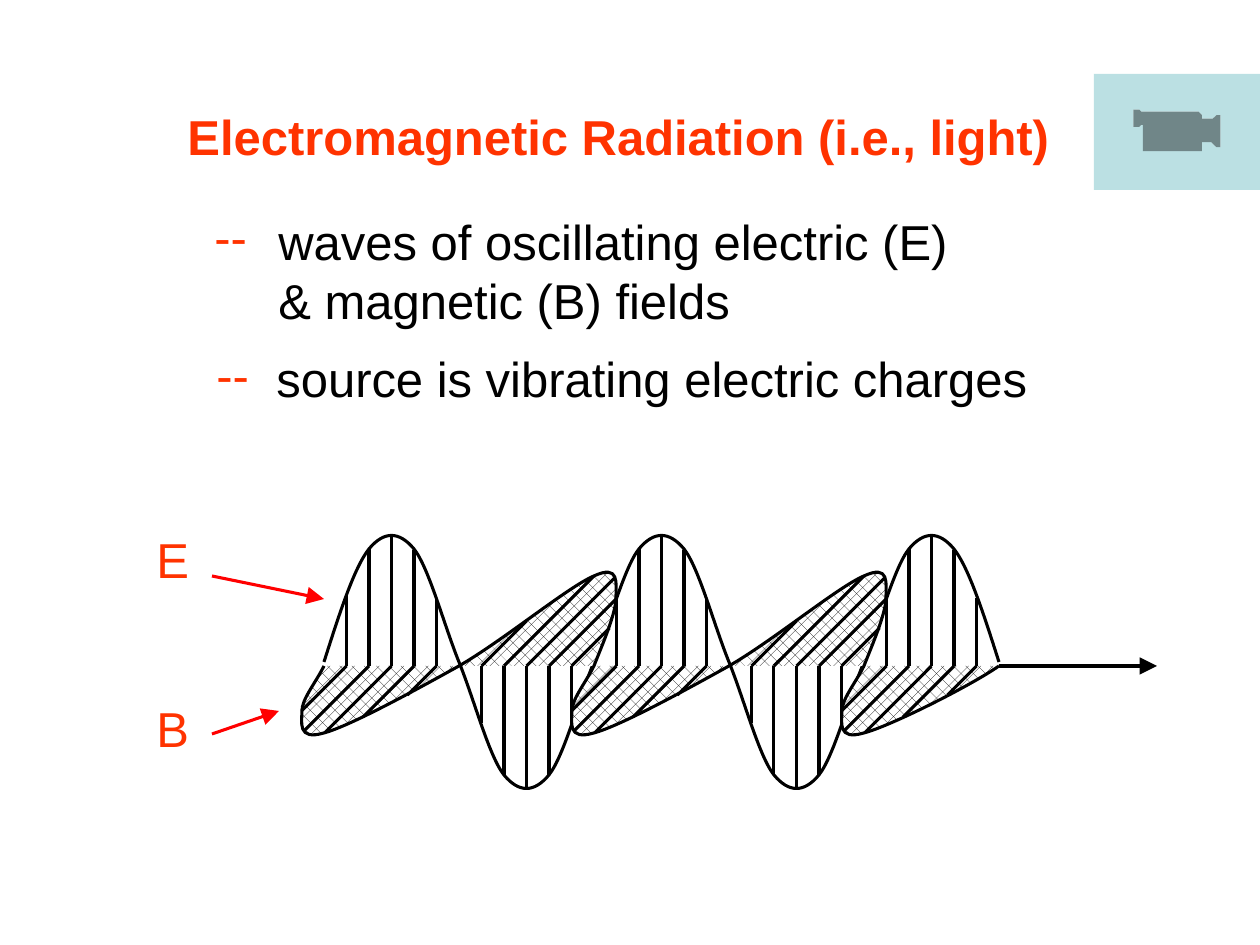
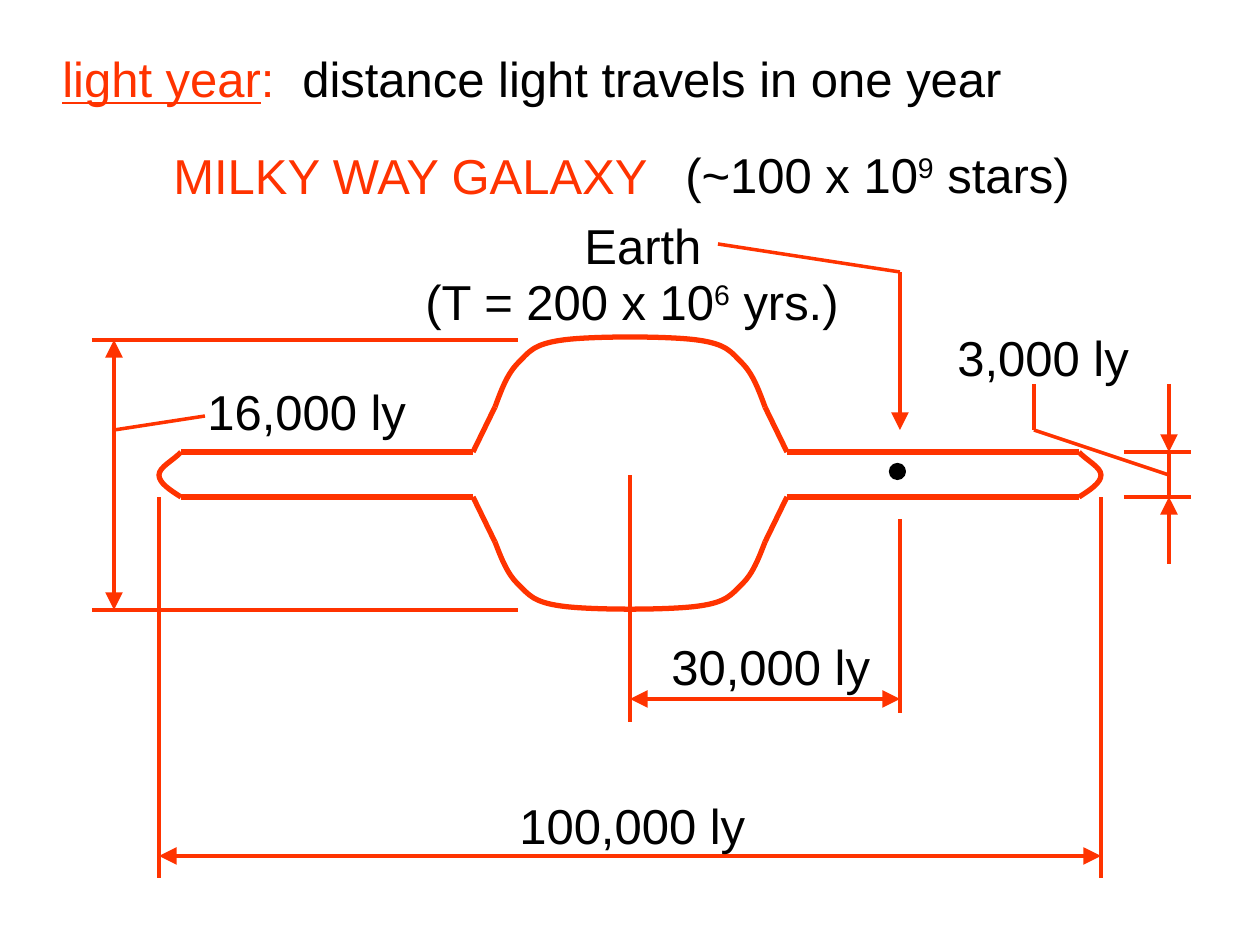
"""Build two astronomy slides: electromagnetic waves and the size of the Milky Way."""
from lxml import etree
from pptx import Presentation
from pptx.dml.color import RGBColor
from pptx.enum.dml import MSO_PATTERN
from pptx.enum.shapes import MSO_CONNECTOR, MSO_SHAPE
from pptx.enum.text import MSO_ANCHOR, MSO_AUTO_SIZE
from pptx.oxml.ns import qn
from pptx.util import Pt

STRAIGHT = MSO_CONNECTOR.STRAIGHT
MOVIE_BUTTON = MSO_SHAPE.ACTION_BUTTON_MOVIE
OVAL = MSO_SHAPE.OVAL
MIDDLE, TOP = MSO_ANCHOR.MIDDLE, MSO_ANCHOR.TOP
GROW, FIXED = MSO_AUTO_SIZE.SHAPE_TO_FIT_TEXT, MSO_AUTO_SIZE.NONE
DOTTED = MSO_PATTERN.PERCENT_30

EMU_PER_PX = 914400 / 126
SLIDE_SIZE = (1260, 945)
FONT, TEXT_SIZE = "Arial", 28
COLORS = {"accent": "FF3300", "ink": "000000", "pointer": "FF0000",
          "button": "BBE0E3", "paper": "FFFFFF"}
WAVE_WIDTH, DIMENSION_WIDTH, GALAXY_WIDTH = 1.75, 2, 3

RADIATION_TEXTS = [
    ((175, 100, 902, 72), [[("Electromagnetic Radiation (i.e., light)", "accent", "bold")]]),
    ((202, 200, 72, 72), [[("--", "accent", "")]]),
    ((204, 338, 72, 72), [[("--", "accent", "")]]),
    ((266, 205, 697, 130), [[("waves of oscillating electric (E)", "ink", "")],
                            [("& magnetic (B) fields", "ink", "")]]),
    ((264, 342, 793, 72), [[("source is vibrating electric charges", "ink", "")]]),
]
FIELD_LABELS = [
    ((144, 523, 73, 76), [[("E", "accent", "")]]),
    ((144, 692, 67, 73), [[("B", "accent", "")]]),
]
FIELD_POINTERS = [(212, 576, 324, 599), (212, 734, 279, 711)]
MOVIE_BOX = (1094, 74, 166, 116)

WAVE_LEFT, HALF_WAVE, HALF_WAVES = 324, 135, 5
AXIS_Y, ELECTRIC_BASE_Y = 666, 662
DIRECTION_ARROW = (999, 666, 1157, 666)
ELECTRIC_HALF = [37, 94, 113, 131, 131, 113, 94, 37, 0]
ELECTRIC_END_RISE = 47
MAGNETIC_LOOP = [
    (-9, 684), (-22, 699), (-22, 711), (-22, 722), (-27, 741), (0, 733),
    (26, 726), (90, 691), (135, 666), (180, 640), (244, 587), (270, 576),
    (296, 564), (292, 583), (292, 598), (292, 614), (277, 648), (270, 666)]
MAGNETIC_END = MAGNETIC_LOOP[:6] + [(27, 726), (108, 685), (135, 666)]
CREST_HATCH = {"electric": [71, 117, 131, 116, 68], "magnetic": [45, 65, 67, 51, 29]}
TROUGH_HATCH = {"electric": [57, 109, 123, 109, 59], "magnetic": [45, 90, 88, 67, 38]}

GALAXY_TEXTS = [
    ((50, 42, 252, 72), [[("light year", "accent", "underline"), (":", "accent", "")]]),
    ((161, 139, 507, 72), [[("MILKY WAY GALAXY", "accent", "")]]),
    ((290, 42, 741, 72), [[("distance light travels in one year", "ink", "")]]),
    ((572, 209, 142, 72), [[("Earth", "ink", "")]]),
    ((195, 375, 238, 72), [[("16,000 ly", "ink", "")]]),
    ((945, 321, 210, 72), [[("3,000 ly", "ink", "")]]),
    ((659, 630, 238, 72), [[("30,000 ly", "ink", "")]]),
    ((507, 789, 266, 72), [[("100,000 ly", "ink", "")]]),
    ((673, 138, 413, 72), [[("(~100 x 10", "ink", ""), ("9", "ink", "super"),
                            (" stars)", "ink", "")]]),
    ((413, 265, 457, 72), [[("(T = 200 x 10", "ink", ""), ("6", "ink", "super"),
                            (" yrs.)", "ink", "")]]),
]
DIMENSION_LINES = [
    (630, 722, 630, 475), (900, 713, 900, 519),
    (1124, 497, 1191, 497), (1124, 452, 1191, 452), (1169, 497, 1169, 452),
    (1169, 475, 1034, 430), (1034, 430, 1034, 384),
    (92, 340, 518, 340), (92, 610, 518, 610),
    (159, 878, 159, 497), (1101, 878, 1101, 497),
    (900, 272, 718, 244), (205, 416, 114, 430),
]
DIMENSION_ARROWS = [
    (742, 699, 630, 699), (742, 699, 900, 699),
    (1169, 384, 1169, 452), (1169, 564, 1169, 497),
    (585, 856, 159, 856), (585, 856, 1101, 856),
    (114, 452, 114, 610), (114, 452, 114, 340),
    (900, 272, 900, 430),
]
GALAXY_SPAN = (1260, 949)
BULGE_TOP = [(495, 407), (501, 391), (507, 374), (518, 363), (529, 352), (533, 344),
             (563, 340), (592, 336), (668, 336), (697, 340), (727, 344), (731, 352),
             (742, 363), (753, 374), (759, 391), (765, 407)]
BULGE_BASE_Y, LOWER_BULGE_RATIO = 407, 0.96
DISK_TIP = [(181, 497), (170, 490), (159, 483), (159, 475),
            (159, 467), (174, 460), (181, 452)]
DISK_EDGES = [(495, 407, 473, 452), (473, 452, 181, 452)]
EARTH_DOT = (890, 464, 15, 15)


def emu(*lengths):
    return [round(length * EMU_PER_PX) for length in lengths]


def color(name):
    return RGBColor.from_string(COLORS[name])


def add_texts(slide, texts, wrap=False):
    for box, paragraphs in texts:
        frame = slide.shapes.add_textbox(*emu(*box)).text_frame
        frame.word_wrap = wrap
        frame.auto_size = FIXED if wrap else GROW
        frame.vertical_anchor = TOP if wrap else MIDDLE
        for index, pieces in enumerate(paragraphs):
            paragraph = frame.add_paragraph() if index else frame.paragraphs[0]
            for text, color_name, style in pieces:
                run = paragraph.add_run()
                run.text = text
                run.font.name, run.font.size = FONT, Pt(TEXT_SIZE)
                run.font.color.rgb = color(color_name)
                run.font.bold = style == "bold"
                run.font.underline = style == "underline"
                if style == "super":
                    run._r.get_or_add_rPr().set("baseline", "30000")


def add_line(slide, ends, color_name, width, arrow=False):
    connector = slide.shapes.add_connector(STRAIGHT, *emu(*ends))
    connector.line.color.rgb = color(color_name)
    connector.line.width = Pt(width)
    properties = connector._element.spPr
    if arrow:
        etree.SubElement(properties.find(qn("a:ln")), qn("a:tailEnd"),
                         type="triangle", w="lg", len="lg")
    etree.SubElement(properties, qn("a:effectLst"))


def add_curve(slide, nodes, color_name, width):
    """Draw cubic curves through a start node and triples of two handles and an end."""
    points = [emu(*node) for node in nodes]
    builder = slide.shapes.build_freeform(*points[0])
    builder.add_line_segments(points[1:], close=False)
    shape = builder.convert_to_shape()
    segments = list(shape._element.iter(qn("a:lnTo")))
    outline = segments[0].getparent()
    for first in range(0, len(segments), 3):
        curve = etree.SubElement(outline, qn("a:cubicBezTo"))
        for segment in segments[first:first + 3]:
            curve.append(segment[0])
            outline.remove(segment)
    shape.shadow.inherit = False
    shape.fill.background()
    shape.line.color.rgb = color(color_name)
    shape.line.width = Pt(width)
    return shape


def add_preset(slide, kind, box, color_name):
    shape = slide.shapes.add_shape(kind, *emu(*box))
    shape.shadow.inherit = False
    shape.fill.solid()
    shape.fill.fore_color.rgb = color(color_name)
    shape.line.fill.background()
    return shape


def electric_nodes():
    heights = [0]
    for half in range(HALF_WAVES):
        heights += [height * (-1) ** half for height in ELECTRIC_HALF]
    heights[1] = heights[-2] = ELECTRIC_END_RISE
    step = HALF_WAVE / len(ELECTRIC_HALF)
    return [(WAVE_LEFT + step * index, ELECTRIC_BASE_Y - height)
            for index, height in enumerate(heights)]


def magnetic_nodes():
    nodes = [(WAVE_LEFT, AXIS_Y)]
    for period, loop in enumerate([MAGNETIC_LOOP, MAGNETIC_LOOP, MAGNETIC_END]):
        left = WAVE_LEFT + period * 2 * HALF_WAVE
        nodes += [(left + x, y) for x, y in loop]
    return nodes


def add_hatching(slide):
    for half in range(HALF_WAVES):
        up = 1 if half % 2 == 0 else -1
        hatch = CREST_HATCH if up == 1 else TROUGH_HATCH
        pairs = zip(hatch["electric"], hatch["magnetic"])
        for index, (height, reach) in enumerate(pairs, start=1):
            x = WAVE_LEFT + HALF_WAVE * (half + index / 6)
            add_line(slide, (x, AXIS_Y, x, AXIS_Y - up * height), "ink", WAVE_WIDTH)
            add_line(slide, (x, AXIS_Y, x - up * reach, AXIS_Y + up * reach),
                     "ink", WAVE_WIDTH)


def build_radiation_slide(slide):
    add_texts(slide, RADIATION_TEXTS[:3])
    add_curve(slide, electric_nodes(), "ink", WAVE_WIDTH)
    magnetic_wave = add_curve(slide, magnetic_nodes(), "ink", WAVE_WIDTH)
    magnetic_wave.fill.patterned()
    magnetic_wave.fill.pattern = DOTTED
    magnetic_wave.fill.fore_color.rgb = color("ink")
    magnetic_wave.fill.back_color.rgb = color("paper")
    add_hatching(slide)
    add_line(slide, DIRECTION_ARROW, "ink", WAVE_WIDTH, arrow=True)
    for pointer, label in zip(FIELD_POINTERS, FIELD_LABELS):
        add_line(slide, pointer, "pointer", WAVE_WIDTH, arrow=True)
        add_texts(slide, [label], wrap=True)
    add_texts(slide, RADIATION_TEXTS[3:])
    add_preset(slide, MOVIE_BUTTON, MOVIE_BOX, "button")


def mirror(points, flip_x, flip_y):
    span_x, span_y = GALAXY_SPAN
    return [(span_x - x if flip_x else x, span_y - y if flip_y else y)
            for x, y in points]


def build_galaxy_slide(slide):
    add_texts(slide, GALAXY_TEXTS[:3])
    for ends in DIMENSION_LINES:
        add_line(slide, ends, "accent", DIMENSION_WIDTH)
    flatter_bulge = [(x, BULGE_BASE_Y + (y - BULGE_BASE_Y) * LOWER_BULGE_RATIO)
                     for x, y in BULGE_TOP]
    for bulge in (BULGE_TOP, mirror(flatter_bulge, False, True)):
        add_curve(slide, bulge, "accent", GALAXY_WIDTH)
    for flip_x in (False, True):
        add_curve(slide, mirror(DISK_TIP, flip_x, False), "accent", GALAXY_WIDTH)
        for flip_y in (False, True):
            for x1, y1, x2, y2 in DISK_EDGES:
                start, end = mirror([(x1, y1), (x2, y2)], flip_x, flip_y)
                add_line(slide, start + end, "accent", GALAXY_WIDTH)
    for ends in DIMENSION_ARROWS:
        add_line(slide, ends, "accent", DIMENSION_WIDTH, arrow=True)
    add_texts(slide, GALAXY_TEXTS[3:])
    earth = add_preset(slide, OVAL, EARTH_DOT, "ink")
    earth.line.color.rgb = color("ink")
    earth.line.width = Pt(1.25)


def main():
    presentation = Presentation()
    presentation.slide_width, presentation.slide_height = emu(*SLIDE_SIZE)
    blank = presentation.slide_layouts[6]
    for build in (build_radiation_slide, build_galaxy_slide):
        build(presentation.slides.add_slide(blank))
    presentation.save("out.pptx")


if __name__ == "__main__":
    main()
